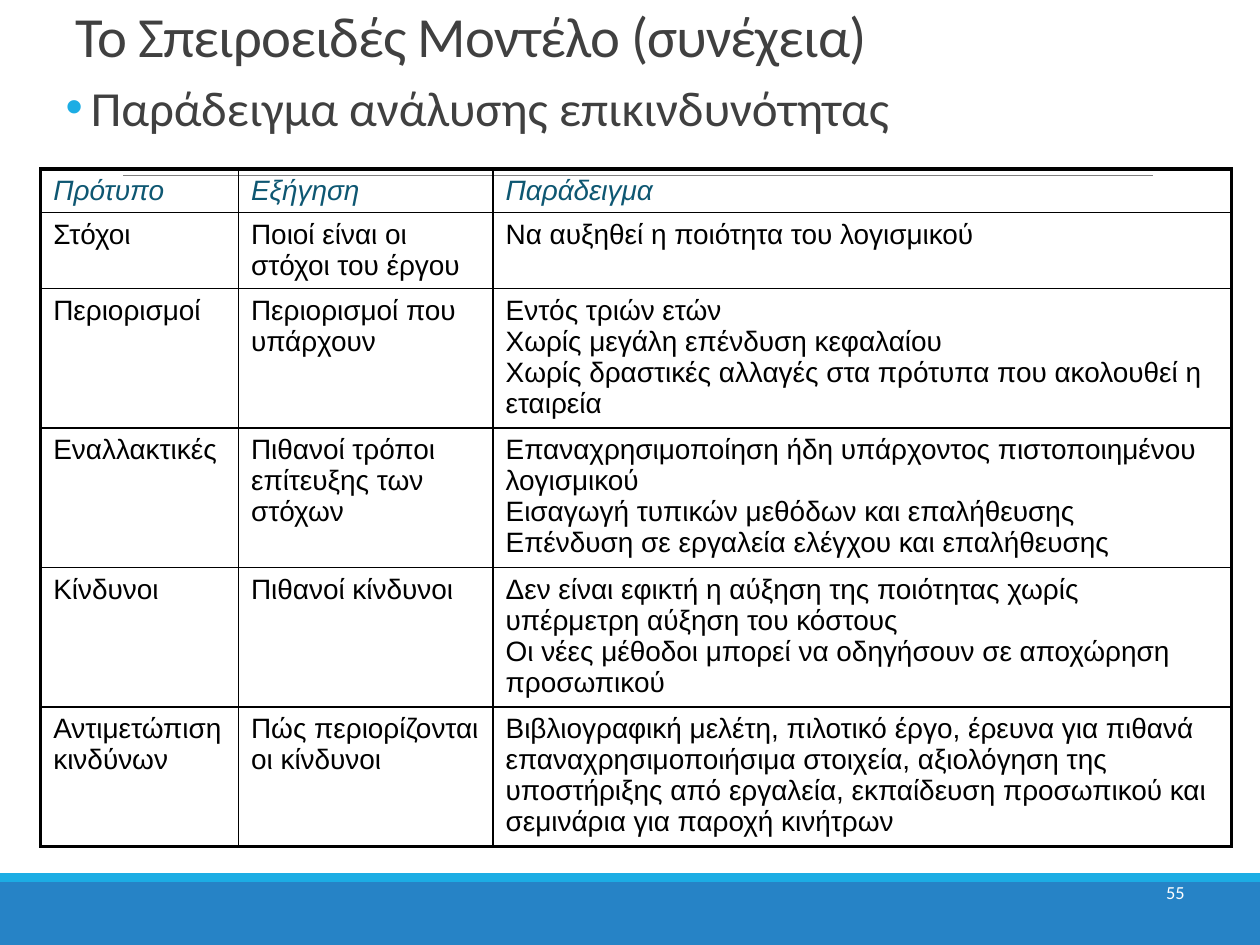
"""Build the spiral model slide with its risk analysis table."""
from lxml.etree import SubElement
from pptx import Presentation
from pptx.dml.color import RGBColor
from pptx.enum.shapes import MSO_CONNECTOR as CONN, MSO_SHAPE as SHAPE
from pptx.enum.text import MSO_ANCHOR as ANCHOR, MSO_AUTO_SIZE as AUTO, PP_ALIGN as ALIGN
from pptx.oxml.ns import qn
from pptx.util import Pt

BLUE = RGBColor(0x26, 0x83, 0xC6)
CYAN = RGBColor(0x1C, 0xAD, 0xE4)
TEAL = RGBColor(0x0E, 0x57, 0x72)
GRAY = RGBColor(0x80, 0x80, 0x80)
DARK = RGBColor(0x40, 0x40, 0x40)
BLACK = RGBColor(0, 0, 0)
WHITE = RGBColor(255, 255, 255)

ROWS = [
    ("Πρότυπο", "Εξήγηση", ["Παράδειγμα"]),
    ("Στόχοι", "Ποιοί είναι οι στόχοι του έργου",
     ["Να αυξηθεί η ποιότητα του λογισμικού"]),
    ("Περιορισμοί", "Περιορισμοί που υπάρχουν",
     ["Εντός τριών ετών",
      "Χωρίς μεγάλη επένδυση κεφαλαίου",
      "Χωρίς δραστικές αλλαγές στα πρότυπα που ακολουθεί η εταιρεία"]),
    ("Εναλλακτικές", "Πιθανοί τρόποι επίτευξης των στόχων",
     ["Επαναχρησιμοποίηση ήδη υπάρχοντος πιστοποιημένου λογισμικού",
      "Εισαγωγή τυπικών μεθόδων και επαλήθευσης",
      "Επένδυση σε εργαλεία ελέγχου και επαλήθευσης"]),
    ("Κίνδυνοι", "Πιθανοί κίνδυνοι",
     ["Δεν είναι εφικτή η αύξηση της ποιότητας χωρίς υπέρμετρη αύξηση του κόστους",
      "Οι νέες μέθοδοι μπορεί να οδηγήσουν σε αποχώρηση προσωπικού"]),
    ("Αντιμετώπιση κινδύνων", "Πώς περιορίζονται οι κίνδυνοι",
     ["Βιβλιογραφική μελέτη, πιλοτικό έργο, έρευνα για πιθανά "
      "επαναχρησιμοποιήσιμα στοιχεία, αξιολόγηση της υποστήριξης από εργαλεία, "
      "εκπαίδευση προσωπικού και σεμινάρια για παροχή κινήτρων"]),
]
COL_WIDTHS = [113, 145.5, 422]
ROW_HEIGHTS = [25, 43.5] + [79.7] * 4


def add_run(p, text, size, color, font="Calibri"):
    r = p.add_run()
    r.text = text
    r.font.size, r.font.name, r.font.color.rgb = Pt(size), font, color
    return r


def add_border(cell, side, width):
    ln = SubElement(cell._tc.get_or_add_tcPr(), qn("a:ln" + side), w=str(Pt(width)))
    fill = SubElement(ln, qn("a:solidFill"))
    SubElement(fill, qn("a:srgbClr"), val=str(BLACK))


prs = Presentation()
prs.slide_width, prs.slide_height = Pt(720), Pt(540)
s = prs.slides.add_slide(prs.slide_layouts[1])

for top, height, color in [(504, 36, BLUE), (499, 5, CYAN)]:
    sp = s.shapes.add_shape(SHAPE.RECTANGLE, 0, Pt(top), Pt(720), Pt(height))
    sp.shadow.inherit = False
    sp.fill.solid()
    sp.fill.fore_color.rgb = color
    sp.line.fill.background()

rule = s.shapes.add_connector(CONN.STRAIGHT, Pt(70.5), Pt(100), Pt(659), Pt(100))
rule.line.color.rgb, rule.line.width = GRAY, Pt(0.5)
SubElement(rule._element.spPr, qn("a:effectLst"))

title = s.shapes.title
title.left, title.top, title.width, title.height = Pt(36), Pt(8), Pt(648), Pt(35)
tf = title.text_frame
tf.auto_size, tf.vertical_anchor = AUTO.NONE, ANCHOR.BOTTOM
p = tf.paragraphs[0]
p.alignment, p.line_spacing = ALIGN.LEFT, 0.85
r = add_run(p, "Το Σπειροειδές Μοντέλο (συνέχεια)", 32.4, DARK)
r.font._element.set("spc", "-50")

body = s.placeholders[1]
body.left, body.top, body.width, body.height = Pt(37.5), Pt(47), Pt(664.5), Pt(34)
tf = body.text_frame
tf.auto_size, tf.margin_left, tf.margin_right = AUTO.NONE, 0, 0
p = tf.paragraphs[0]
p.line_spacing, p.space_before, p.space_after = 0.8, Pt(12), Pt(2)
pPr = p._p.get_or_add_pPr()
pPr.set("marL", str(Pt(14.4)))
pPr.set("indent", str(Pt(-14.4)))
SubElement(SubElement(pPr, qn("a:buClr")), qn("a:srgbClr"), val=str(CYAN))
SubElement(pPr, qn("a:buFont"), typeface="Arial")
SubElement(pPr, qn("a:buChar"), char="•")
add_run(p, "Παράδειγμα ανάλυσης επικινδυνότητας", 28, DARK)

frame = s.shapes.add_table(len(ROWS), len(COL_WIDTHS), Pt(23.3), Pt(96.5),
                           Pt(sum(COL_WIDTHS)), Pt(sum(ROW_HEIGHTS)))
table = frame.table
table.first_row = table.horz_banding = False
for col, width in zip(table.columns, COL_WIDTHS):
    col.width = Pt(width)
for row, height in zip(table.rows, ROW_HEIGHTS):
    row.height = Pt(height)

for i, (name, meaning, examples) in enumerate(ROWS):
    for j, lines in enumerate([[name], [meaning], examples]):
        cell = table.cell(i, j)
        outer = {"L": j == 0, "R": j == len(COL_WIDTHS) - 1,
                 "T": i == 0, "B": i == len(ROWS) - 1}
        for side, is_outer in outer.items():
            add_border(cell, side, 2.25 if is_outer else 1)
        cell.fill.background()
        tf = cell.text_frame
        for n, line in enumerate(lines):
            p = tf.add_paragraph() if n else tf.paragraphs[0]
            r = add_run(p, line, 16, BLACK if i else TEAL, "Arial")
            r.font.italic = i == 0

number = s.shapes.add_textbox(Pt(516), Pt(492), Pt(168), Pt(36))
tf = number.text_frame
tf.word_wrap, tf.vertical_anchor = True, ANCHOR.MIDDLE
p = tf.paragraphs[0]
p.alignment = ALIGN.RIGHT
add_run(p, "55", 10.5, WHITE)

prs.save("out.pptx")
